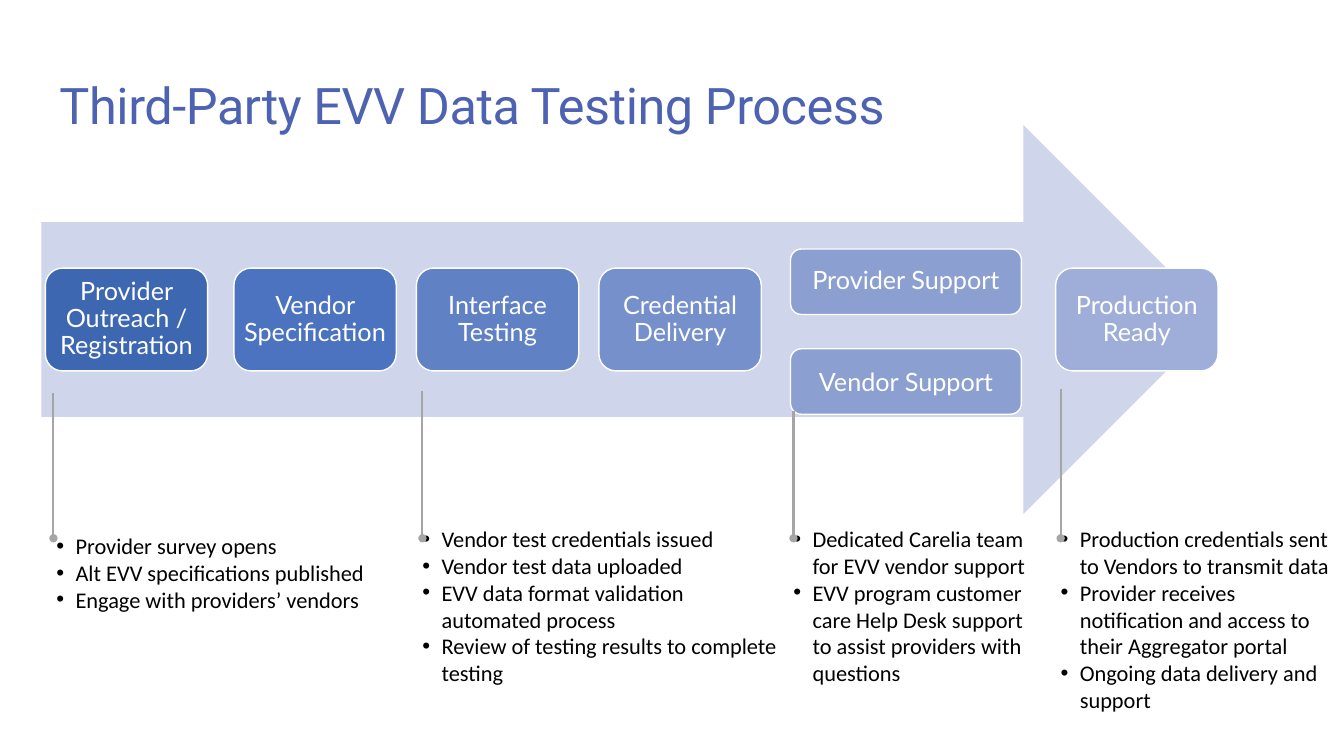
from lxml import etree
from pptx import Presentation
from pptx.dml.color import RGBColor
from pptx.enum import shapes, text
from pptx.oxml.ns import qn
from pptx.util import Inches, Pt

# Content
TITLE = "Third-Party EVV Data Testing Process"
COLORS = {
    "title": "4E62B2", "arrow": "CFD5EA", "white": "FFFFFF",
    "body": "000000", "leader": "A5A5A5",
    "outreach": "3E67B2", "specification": "4C73BF", "testing": "6181C5",
    "delivery": "7690CB", "support": "8B9FD1", "ready": "9FAED8",
}
# Label, color, left, side inset
STEPS = [
    ("Provider Outreach / Registration", "outreach", 0.45, 0.07),
    ("Vendor Specification", "specification", 2.32, 0),
    ("Interface Testing", "testing", 4.13, 0.07),
    ("Credential Delivery", "delivery", 5.94, 0.07),
    ("Production Ready", "ready", 10.47, 0.07),
]
# Label, top, line spacing
SUPPORT = [("Provider Support", 2.47, 0.9), ("Vendor Support", 3.46, 1.0)]
# Leader x, leader top, box (left, top, width, height), bullets
NOTES = [
    (0.53, 3.9, (0.56, 5.23, 3.2, 0.91), [
        "Provider survey opens",
        "Alt EVV specifications published",
        "Engage with providers’ vendors"]),
    (4.19, 3.88, (4.19, 5.16, 3.57, 1.72), [
        "Vendor test credentials issued",
        "Vendor test data uploaded",
        "EVV data format validation automated process",
        "Review of testing results to complete testing"]),
    (7.87, 4.08, (7.87, 5.16, 2.4, 1.95), [
        "Dedicated Carelia team for EVV vendor support",
        "EVV program customer care Help Desk support to assist providers "
        "with questions"]),
    (10.52, 3.86, (10.52, 5.16, 2.77, 2.22), [
        "Production credentials sent to Vendors to transmit data",
        "Provider receives notification and access to their Aggregator portal",
        "Ongoing data delivery and support"]),
]
STEP_TOP, STEP_W, STEP_H = 2.66, 1.61, 1.02
SUPPORT_LEFT, SUPPORT_W, SUPPORT_H = 7.84, 2.29, 0.65
LEADER_BOTTOM = 5.34


def rgb(name):
    return RGBColor.from_string(COLORS[name])


def set_font(p, name, size, color):
    for r in p.runs:
        r.font.name, r.font.size = name, Pt(size)
        r.font.color.rgb = rgb(color)


def set_frame(tf, side, top, bottom, anchor):
    tf.word_wrap = True
    tf.auto_size = text.MSO_AUTO_SIZE.NONE
    tf.margin_left = tf.margin_right = Inches(side)
    tf.margin_top, tf.margin_bottom = Inches(top), Inches(bottom)
    tf.vertical_anchor = anchor


def add_filled(kind, box, color):
    sp = s.shapes.add_shape(kind, *map(Inches, box))
    sp.shadow.inherit = False
    sp.fill.solid()
    sp.fill.fore_color.rgb = rgb(color)
    sp.line.fill.background()
    return sp


def add_step(label, box, color, side, spacing=0.9):
    sp = add_filled(shapes.MSO_SHAPE.ROUNDED_RECTANGLE, box, color)
    sp.line.color.rgb = rgb("white")
    sp.line.width = Pt(1)
    tf = sp.text_frame
    set_frame(tf, side, 0.07, 0.07, text.MSO_ANCHOR.MIDDLE)
    tf.text = label
    p = tf.paragraphs[0]
    p.alignment = text.PP_ALIGN.CENTER
    p.line_spacing = spacing
    set_font(p, "Lato", 18, "white")


def add_bullets(box, lines):
    tf = s.shapes.add_textbox(*map(Inches, box)).text_frame
    set_frame(tf, 0, 0.05, 0.05, text.MSO_ANCHOR.TOP)
    tf.text = "\n".join(lines)
    for p in tf.paragraphs:
        pPr = p._p.get_or_add_pPr()
        pPr.set("marL", str(Inches(0.19)))
        pPr.set("indent", str(-Inches(0.19)))
        etree.SubElement(pPr, qn("a:buFont"), typeface="Arial")
        etree.SubElement(pPr, qn("a:buChar"), char="•")
        set_font(p, "Calibri", 16, "body")


def add_leader(x, top):
    line = s.shapes.add_connector(
        shapes.MSO_CONNECTOR.STRAIGHT,
        Inches(x), Inches(top), Inches(x), Inches(LEADER_BOTTOM))
    line.line.color.rgb = rgb("leader")
    line.line.width = Pt(1.5)
    etree.SubElement(line.line._get_or_add_ln(), qn("a:tailEnd"), type="oval")
    etree.SubElement(line._element.spPr, qn("a:effectLst"))


prs = Presentation()
prs.slide_width, prs.slide_height = Inches(13.33), Inches(7.5)
s = prs.slides.add_slide(prs.slide_layouts[5])

# Title
title = s.shapes.title
title.left, title.top = Inches(0.58), Inches(0.13)
title.width, title.height = Inches(11.5), Inches(1.45)
set_frame(title.text_frame, 0, 0.34, 0, text.MSO_ANCHOR.MIDDLE)
title.text_frame.text = TITLE
p = title.text_frame.paragraphs[0]
p.alignment = text.PP_ALIGN.LEFT
p.line_spacing = Pt(45.2)
p._p.get_or_add_pPr().set("marL", str(Inches(0.01)))
set_font(p, "Roboto", 36, "title")
p.runs[0].font._element.set("spc", "-30")

# Process arrow and steps
add_filled(shapes.MSO_SHAPE.RIGHT_ARROW, (0.41, 1.24, 11.67, 3.86), "arrow")
for label, color, left, side in STEPS:
    add_step(label, (left, STEP_TOP, STEP_W, STEP_H), color, side)
for label, top, spacing in SUPPORT:
    add_step(label, (SUPPORT_LEFT, top, SUPPORT_W, SUPPORT_H),
             "support", 0, spacing)

# Notes with their leader lines
for x, top, box, lines in NOTES:
    add_bullets(box, lines)
    add_leader(x, top)

prs.save("out.pptx")
